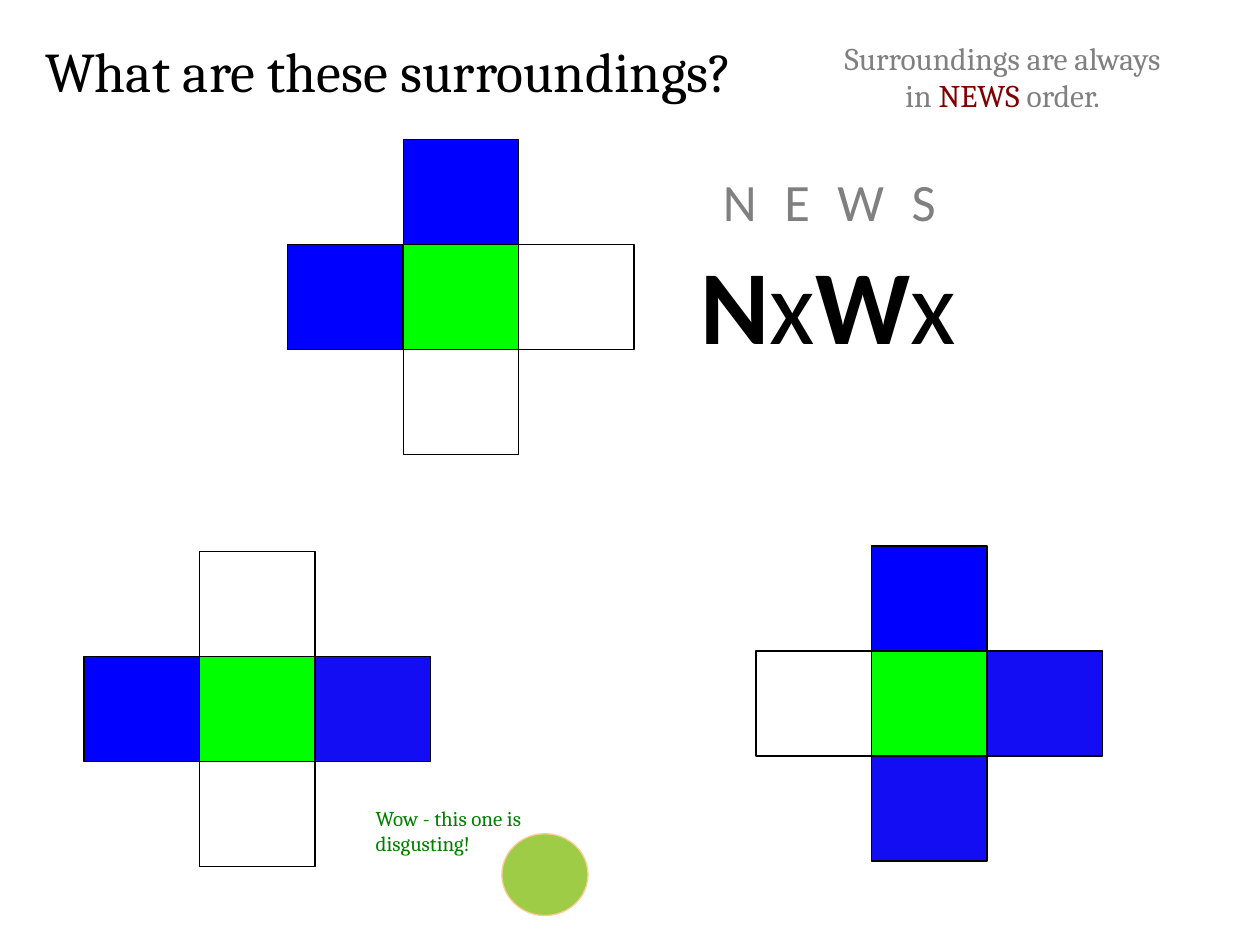
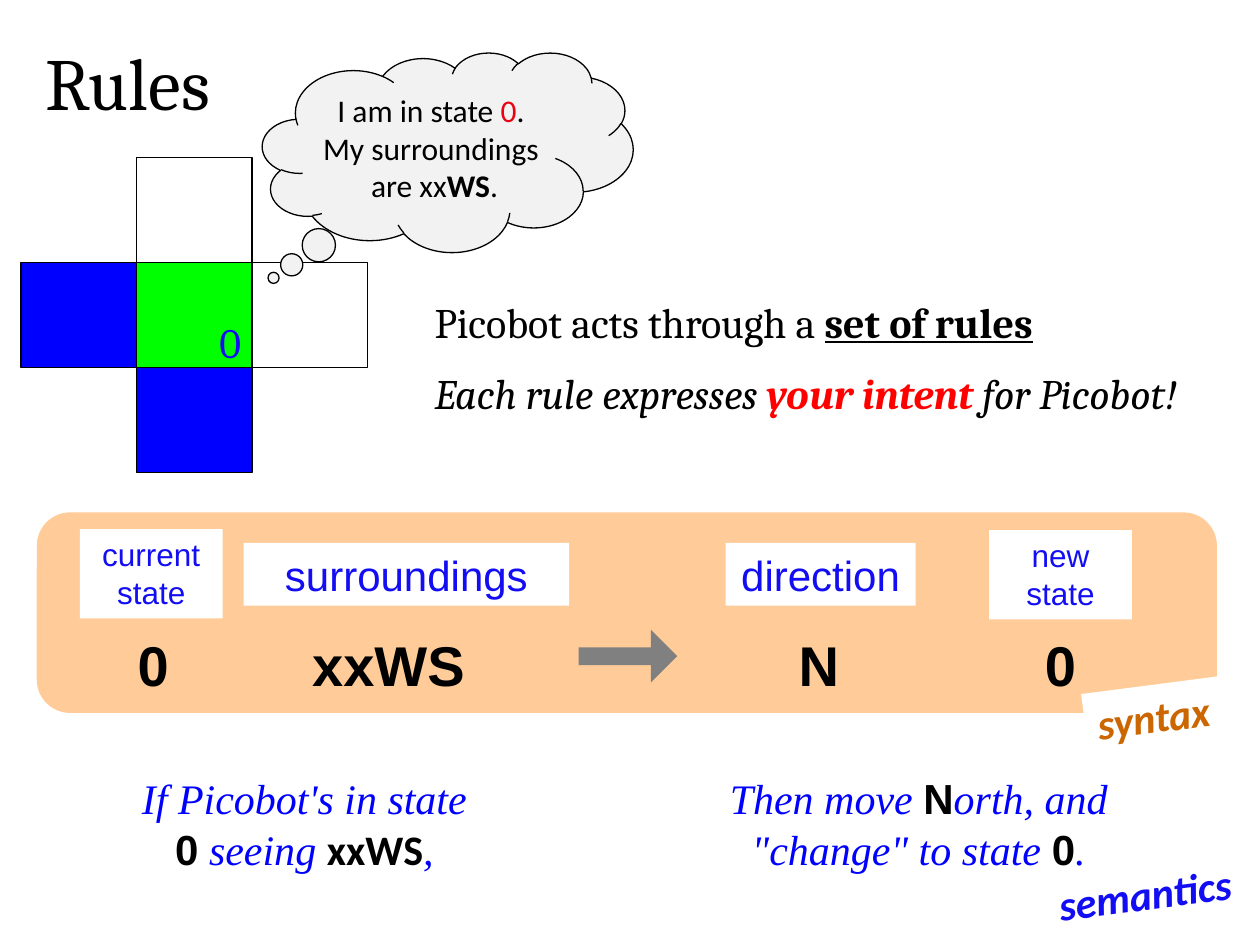
from pptx import Presentation
from pptx.dml.color import RGBColor
from pptx.enum.shapes import MSO_SHAPE
from pptx.enum.text import MSO_ANCHOR, MSO_AUTO_SIZE, PP_ALIGN
from pptx.util import Pt

SCALE = 7620  # EMU per px, 120 px to the inch
CELL_W, CELL_H = 110, 100
LEFT, MID = PP_ALIGN.LEFT, PP_ALIGN.CENTER

BLACK, WHITE, GRAY = "000000", "FFFFFF", "808080"
BLUE, INK, GREEN, RED = "0000FF", "120DF3", "00FF00", "FF0000"
PEACH, RUST = "FFCC99", "CC6600"


# Shared helpers
def emu(box):
    return [n * SCALE for n in box]


def paint(fmt, color):
    """Give a fill or a font colour a hex value."""
    if hasattr(fmt, "solid"):
        fmt.solid()
        fmt = fmt.fore_color
    fmt.rgb = RGBColor.from_string(color)


def style(font="Cambria", size=24, color=BLACK, **more):
    return {"name": font, "size": Pt(size), "color": color, **more}


def write(frame, paras, base, align=LEFT, wrap=True, anchor=MSO_ANCHOR.TOP):
    """Fill a frame; a paragraph is a string or a list of (text, changes)."""
    frame.auto_size = MSO_AUTO_SIZE.NONE
    frame.word_wrap = wrap
    frame.vertical_anchor = anchor
    for i, runs in enumerate(paras):
        para = frame.add_paragraph() if i else frame.paragraphs[0]
        para.alignment = align
        for text, diff in [(runs, {})] if isinstance(runs, str) else runs:
            run = para.add_run()
            run.text = text
            look = {**base, **diff}
            paint(run.font.color, look.pop("color"))
            for key, value in look.items():
                setattr(run.font, key, value)


def title(slide, box, text, size):
    head = slide.shapes.title
    head.left, head.top, head.width, head.height = emu(box)
    write(head.text_frame, [text], style(size=size))


def label(slide, box, runs, base, align=LEFT, wrap=True, turn=0):
    note = slide.shapes.add_textbox(*emu(box))
    note.rotation = turn
    write(note.text_frame, [runs], base, align, wrap)
    return note


def block(slide, kind, box, fill=None, line=None, adjust=()):
    item = slide.shapes.add_shape(kind, *emu(box))
    item.shadow.inherit = False
    if fill:
        paint(item.fill, fill)
    else:
        item.fill.background()
    if line:
        paint(item.line.fill, line)
        item.line.width = Pt(0.75)
    else:
        item.line.fill.background()
    for i, value in enumerate(adjust):
        item.adjustments[i] = value
    return item


def cross(slide, x, y, north, east, west, south):
    """Draw the robot's cell at x, y and its four neighbours."""
    cells = [(0, 0, GREEN), (0, -1, north), (1, 0, east),
             (-1, 0, west), (0, 1, south)]
    for col, row, fill in cells:
        box = (x + col * CELL_W, y + row * CELL_H, CELL_W, CELL_H)
        block(slide, MSO_SHAPE.RECTANGLE, box, fill, BLACK)


# Slide 1
def around(slide):
    title(slide, (31, 29, 848, 77), "What are these surroundings?", 32)
    cross(slide, 384, 233, BLUE, None, BLUE, None)
    cross(slide, 190, 625, WHITE, INK, BLUE, WHITE)
    cross(slide, 830, 620, BLUE, INK, WHITE, INK)

    # Answer and its key
    bold = {"bold": True}
    label(slide, (654, 222, 270, 132),
          [("N", bold), ("x", {}), ("W", bold), ("x", {})],
          style("Calibri", 60), MID)
    key = label(slide, (655, 155, 270, 72), "N E W S",
                style("Calibri", 30, GRAY), MID)
    key.text_frame.paragraphs[0].runs[0].font._element.set("spc", "450")
    label(slide, (786, 31, 338, 84),
          [("Surroundings are always in ", {}),
           ("NEWS ", {"color": "800000"}), ("order.", {})],
          style(size=18, color=GRAY), MID)

    # Plain stand-in for the mascot, with its remark
    block(slide, MSO_SHAPE.OVAL, (478, 794, 82, 78), "9ECC46", PEACH)
    label(slide, (346, 761, 196, 60), "Wow - this one is disgusting!",
          style(size=12, color="008000"))


# Slide 2
def rules(slide):
    block(slide, MSO_SHAPE.ROUNDED_RECTANGLE, (35, 488, 1124, 191), PEACH)
    title(slide, (31, 29, 390, 96), "Rules", 42)

    # Robot with its state and thought
    cross(slide, 130, 250, None, None, BLUE, BLUE)
    label(slide, (197, 296, 47, 60), "0", style(color=INK), wrap=False)
    cloud = block(slide, MSO_SHAPE.CLOUD_CALLOUT, (250, 50, 353, 190),
                  "F2F2F2", BLACK, (-0.47, 0.63))
    thought = [[("I am in state ", {}), ("0", {"color": "E80416"}),
                (". ", {})],
               "My surroundings ",
               [("are xx", {}), ("WS", {"bold": True}), (".", {})]]
    write(cloud.text_frame, thought, style("Calibri", 18), MID, False,
          MSO_ANCHOR.MIDDLE)

    # What rules are
    label(slide, (402, 276, 798, 61),
          [("Picobot acts through a ", {}),
           ("set of rules", {"bold": True, "underline": True})], style())
    label(slide, (402, 344, 798, 61),
          [("Each rule expresses ", {}),
           ("your intent", {"color": RED, "bold": True}),
           (" for Picobot!", {})], style(italic=True))

    # Parts of a rule: tag above, value below
    parts = [((76, 504, 136, 85), "current state", 18, "0", 96, 100),
             ((232, 517, 310, 60), "surroundings", 24, "xxWS", 280, 180),
             ((691, 517, 181, 60), "direction", 24, "N", 690, 180),
             ((942, 505, 136, 85), "new state", 18, "0", 920, 180)]
    for box, name, size, value, x, width in parts:
        tag = block(slide, MSO_SHAPE.RECTANGLE, box, WHITE)
        write(tag.text_frame, [name], style("Arial", size, INK), MID)
        label(slide, (x, 595, width, 77), value,
              style("Arial", 32, bold=True), MID)
    block(slide, MSO_SHAPE.RIGHT_ARROW, (551, 600, 94, 50), GRAY,
          adjust=(0.34, 0.5))

    # The rule in words
    code = {"name": "Arial", "color": BLACK, "italic": False, "bold": True}
    prose = style("Times New Roman", color=BLUE, italic=True)
    label(slide, (110, 730, 360, 109),
          [("If Picobot's in state ", {}), ("0", code), (" seeing ", {}),
           ("xxWS", {**code, "name": "Calibri"}), (",", {})], prose, MID)
    label(slide, (670, 730, 410, 109),
          [("Then move ", {}), ("N", code),
           ('orth, and "change" to state ', {}), ("0", code), (".", {})],
          prose, MID)

    # Tilted names
    for box, name, color, fill in [
            ((1033, 652, 137, 60), "syntax", RUST, WHITE),
            ((996, 821, 191, 60), "semantics", INK, None)]:
        look = style("Calibri", color=color, bold=True, italic=True)
        note = label(slide, box, name, look, wrap=False, turn=352.6)
        if fill:
            paint(note.fill, fill)


def main():
    deck = Presentation()
    deck.slide_width, deck.slide_height = emu((1200, 900))
    for build in (around, rules):
        build(deck.slides.add_slide(deck.slide_layouts[5]))
    deck.save("out.pptx")


if __name__ == "__main__":
    main()
